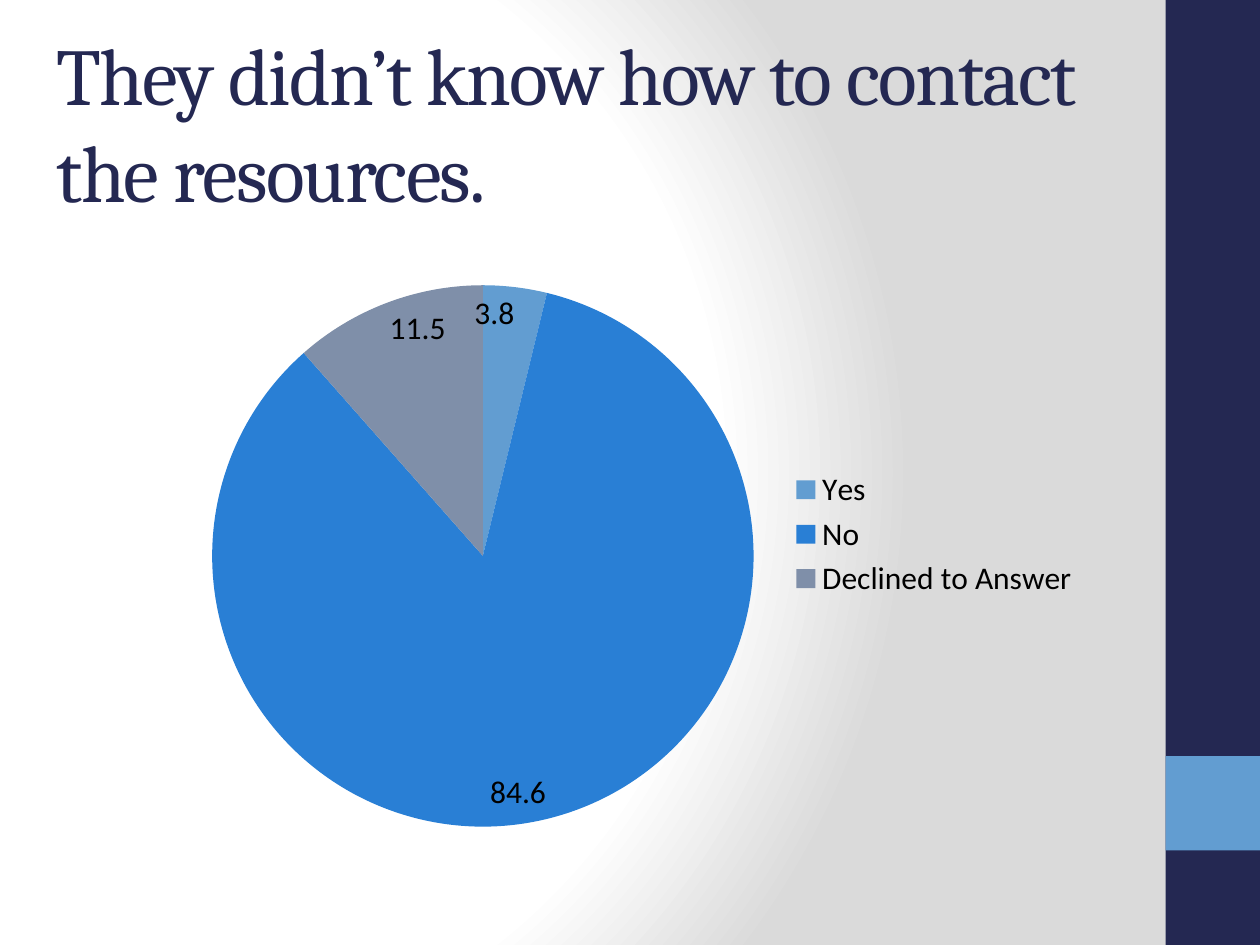
from lxml.etree import SubElement
from pptx import Presentation
from pptx.chart.data import CategoryChartData
from pptx.dml.color import RGBColor
from pptx.enum.chart import XL_CHART_TYPE, XL_LABEL_POSITION, XL_LEGEND_POSITION
from pptx.enum.shapes import MSO_SHAPE
from pptx.enum.text import MSO_ANCHOR, MSO_AUTO_SIZE, PP_ALIGN
from pptx.oxml import parse_xml
from pptx.oxml.ns import nsdecls, qn
from pptx.util import Inches, Pt

NAVY = "242852"
LIGHT_BLUE = "629DD1"
BLUE = "297FD5"
GREY_BLUE = "7F8FA9"
BLACK = "000000"

ANSWERS = [
    ("Yes", 3.8, LIGHT_BLUE),
    ("No", 84.6, BLUE),
    ("Declined to Answer", 11.5, GREY_BLUE),
]


def set_color(color_format, value):
    color_format.rgb = RGBColor.from_string(value)


def fill_solid(fill, value):
    fill.solid()
    set_color(fill.fore_color, value)


def set_background(slide, stops, focus):
    """Radial gradient; stops are (percent, colour), focus holds edge percents."""
    fill = slide.background.fill
    fill.solid()
    properties = slide.background._cSld.find(qn("p:bg")).find(qn("p:bgPr"))
    stop_xml = "".join(
        f'<a:gs pos="{percent * 1000}"><a:srgbClr val="{value}"/></a:gs>'
        for percent, value in stops
    )
    edges = " ".join(f'{side}="{percent * 1000}"' for side, percent in zip("ltrb", focus))
    gradient = parse_xml(
        f'<a:gradFill {nsdecls("a")} rotWithShape="1"><a:gsLst>{stop_xml}</a:gsLst>'
        f'<a:path path="circle"><a:fillToRect {edges}/></a:path></a:gradFill>'
    )
    properties.replace(properties.find(qn("a:solidFill")), gradient)


def add_band(slide, top, height, value):
    """Block in the right-hand side strip."""
    shape = slide.shapes.add_shape(
        MSO_SHAPE.RECTANGLE, Inches(9.25), Inches(top), Inches(0.75), Inches(height)
    )
    shape.shadow.inherit = False
    fill_solid(shape.fill, value)
    shape.line.fill.background()


def set_title(slide, text):
    title = slide.shapes.title
    title.left, title.top = Inches(0.35), Inches(0.34)
    title.width, title.height = Inches(8.73), Inches(1.25)
    frame = title.text_frame
    frame.word_wrap = True
    frame.auto_size = MSO_AUTO_SIZE.NONE
    frame.vertical_anchor = MSO_ANCHOR.MIDDLE
    paragraph = frame.paragraphs[0]
    paragraph.alignment = PP_ALIGN.LEFT
    run = paragraph.add_run()
    run.text = text
    run.font.name = "Cambria"
    run.font.size = Pt(46)
    set_color(run.font.color, NAVY)
    run.font._element.set("spc", "-100")


def set_plot_layout(chart, **fractions):
    """Fix the inner plot area as fractions of the chart frame."""
    plot_area = chart._chartSpace.chart.plotArea
    layout = plot_area.find(qn("c:layout"))
    if layout is None:
        layout = parse_xml(f'<c:layout {nsdecls("c")}/>')
        plot_area.insert(0, layout)
    manual = SubElement(layout, qn("c:manualLayout"))
    settings = {"layoutTarget": "inner", "xMode": "edge", "yMode": "edge", **fractions}
    for name, value in settings.items():
        SubElement(manual, qn(f"c:{name}")).set("val", str(value))


def add_pie(slide, answers):
    data = CategoryChartData()
    data.categories = [name for name, _, _ in answers]
    data.add_series("Series 1", [value for _, value, _ in answers])
    chart = slide.shapes.add_chart(
        XL_CHART_TYPE.PIE, Inches(1.45), Inches(1.77), Inches(7.22), Inches(4.94), data
    ).chart
    chart.has_title = False
    chart.font.name = "Calibri"
    chart.font.size = Pt(18)
    set_color(chart.font.color, BLACK)
    set_plot_layout(chart, x=0.03, y=0.1, w=0.6, h=0.87)

    # Slices and their values
    plot = chart.plots[0]
    plot.vary_by_categories = True
    for index, (_, _, value) in enumerate(answers):
        fill_solid(plot.series[0].points[index].format.fill, value)
    plot.has_data_labels = True
    plot.data_labels.show_value = True
    plot.data_labels.show_percentage = False
    plot.data_labels.position = XL_LABEL_POSITION.INSIDE_END

    # Legend
    chart.has_legend = True
    chart.legend.position = XL_LEGEND_POSITION.RIGHT
    chart.legend.include_in_layout = False


def main():
    presentation = Presentation()
    presentation.slide_width = Inches(10)
    presentation.slide_height = Inches(7.5)
    slide = presentation.slides.add_slide(presentation.slide_layouts[5])

    # Backdrop
    set_background(
        slide, [(0, "FFFFFF"), (75, "FFFFFF"), (100, "DADADA")], (20, 50, 100, 50)
    )
    add_band(slide, 0, 7.5, NAVY)
    add_band(slide, 6, 0.75, LIGHT_BLUE)

    # Content
    set_title(slide, "They didn’t know how to contact the resources.")
    add_pie(slide, ANSWERS)

    presentation.save("out.pptx")


if __name__ == "__main__":
    main()
